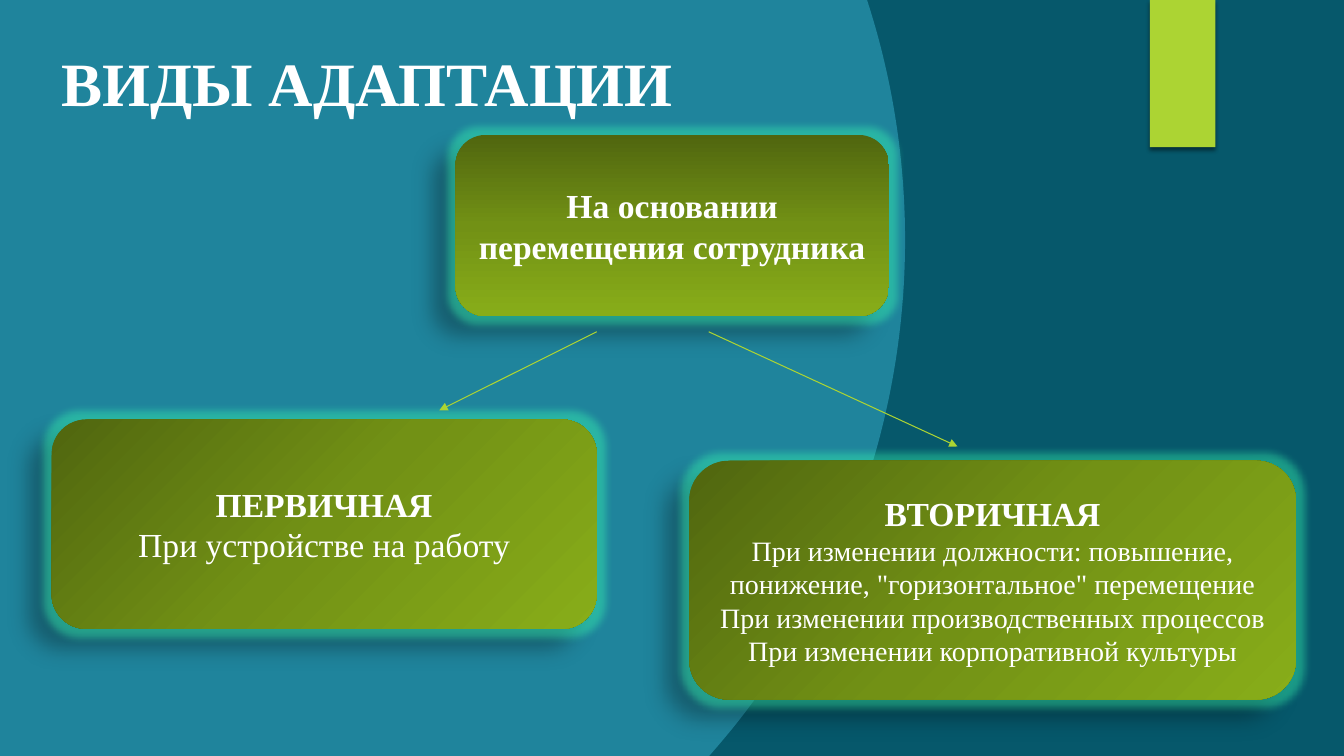
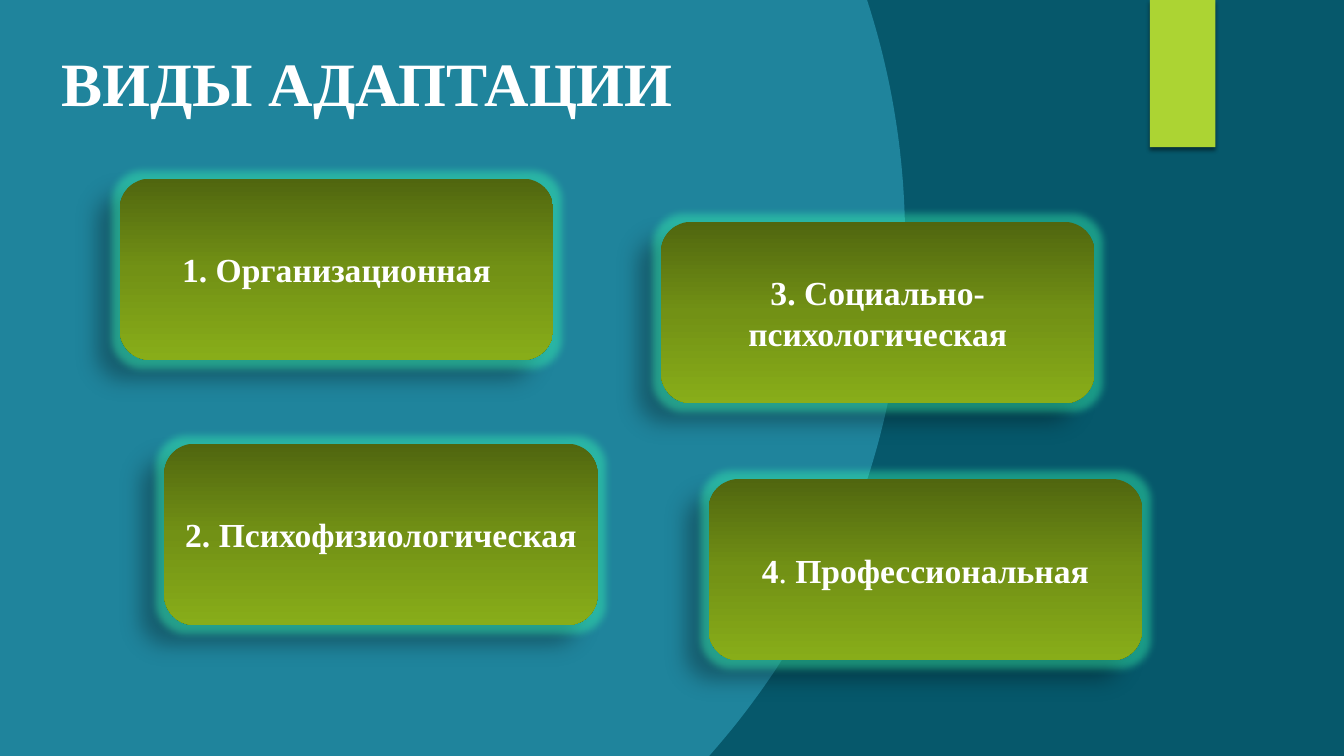
"""Build two slides on the kinds of staff adaptation."""
import copy
import math
from dataclasses import dataclass

from lxml import etree
from pptx import Presentation
from pptx import util as u
from pptx.dml.color import RGBColor
from pptx.enum import shapes, text
from pptx.oxml import ns

COLORS = {
    "backdrop": "06586B",
    "disc": "1F849C",
    "lime": "ACD433",
    "olive_dark": "50660F",
    "olive": "729115",
    "olive_light": "88AD19",
    "glow": "3AFFB2",
    "shadow": "000000",
    "text": "FFFFFF",
}
FONT = "Times New Roman"
TITLE = "ВИДЫ АДАПТАЦИИ"
WIDTH, HEIGHT = 33.87, 19.05
DISC_X, DISC_Y, DISC_RADIUS = 3.23, 6.05, 19.58
ARC_STEPS = 120
CARD_WIDTH, CARD_HEIGHT = 10.92, 4.57


@dataclass(frozen=True)
class Phrase:
    wording: str
    bold: bool = True


@dataclass(frozen=True)
class Line:
    phrases: tuple[Phrase, ...]
    size: int = 24


@dataclass(frozen=True)
class Card:
    left: float
    top: float
    lines: tuple[Line, ...]
    width: float = CARD_WIDTH
    height: float = CARD_HEIGHT
    angle: int = 90


@dataclass(frozen=True)
class Arrow:
    start: tuple[float, float]
    end: tuple[float, float]


@dataclass(frozen=True)
class Shadow:
    alpha: int
    blur: float
    distance: float
    direction: int


CARD_SHADOW = Shadow(28, 11.8, 19.7, 141)
BAND_SHADOW = Shadow(45, 3, 2, 90)


def heading(wording: str) -> Line:
    return Line((Phrase(wording),))


def detail(wording: str, size: int) -> Line:
    return Line((Phrase(wording, False),), size)


MOVEMENT_CARDS = (
    Card(11.48, 3.4, (heading("На основании перемещения сотрудника"),)),
    Card(17.37, 11.61, (
        heading("ВТОРИЧНАЯ"),
        detail("При изменении должности: повышение, понижение, \"горизонтальное\" перемещение", 20),
        detail("При изменении производственных процессов", 20),
        detail("При изменении корпоративной культуры", 20),
    ), 15.29, 6.02, 45),
    Card(1.3, 10.57, (
        heading("ПЕРВИЧНАЯ"),
        detail("При устройстве на работу", 24),
    ), 13.74, 5.28, 45),
)
MOVEMENT_ARROWS = (
    Arrow((15.04, 8.36), (11.07, 10.34)),
    Arrow((17.86, 8.36), (24.13, 11.25)),
)
KIND_CARDS = (
    Card(3.02, 4.5, (heading("1. Организационная"),)),
    Card(16.66, 5.59, (heading("3. Социально-психологическая"),)),
    Card(4.14, 11.18, (heading("2. Психофизиологическая"),)),
    Card(17.86, 12.07, (Line((Phrase("4"), Phrase(". ", False), Phrase("Профессиональная"))),)),
)


def rgb(name: str) -> RGBColor:
    return RGBColor.from_string(COLORS[name])


def add_effect(effects, tag: str, color: str, alpha: int, **attributes: int) -> None:
    effect = etree.SubElement(effects, ns.qn(tag), {k: str(v) for k, v in attributes.items()})
    tint = etree.SubElement(effect, ns.qn("a:srgbClr"), val=COLORS[color])
    etree.SubElement(tint, ns.qn("a:alpha"), val=str(alpha * 1000))


def add_effects(shape, shadow: Shadow, glow: bool = False) -> None:
    shape.shadow.inherit = False
    effects = shape.element.spPr.find(ns.qn("a:effectLst"))
    if glow:
        add_effect(effects, "a:glow", "glow", 40, rad=u.Pt(11))
    add_effect(effects, "a:outerShdw", "shadow", shadow.alpha,
               blurRad=u.Pt(shadow.blur), dist=u.Pt(shadow.distance),
               dir=shadow.direction * 60000, rotWithShape=0)


def fill_plain(shape, color: str) -> None:
    shape.fill.solid()
    shape.fill.fore_color.rgb = rgb(color)
    shape.line.fill.background()


def format_run(run, size: int, bold: bool) -> None:
    run.font.name = FONT
    run.font.size = u.Pt(size)
    run.font.bold = bold
    run.font.color.rgb = rgb("text")


def decorate_layout(layout, slide) -> None:
    layout.background.fill.solid()
    layout.background.fill.fore_color.rgb = rgb("backdrop")
    first = math.asin(-DISC_Y / DISC_RADIUS)
    last = math.asin((HEIGHT - DISC_Y) / DISC_RADIUS)
    angles = [first + (last - first) * step / ARC_STEPS for step in range(ARC_STEPS + 1)]
    arc = [(u.Cm(DISC_X + DISC_RADIUS * math.cos(a)), u.Cm(DISC_Y + DISC_RADIUS * math.sin(a)))
           for a in angles]
    outline = slide.shapes.build_freeform(0, 0)
    outline.add_line_segments(arc + [(0, u.Cm(HEIGHT))], close=True)
    disc = outline.convert_to_shape()
    fill_plain(disc, "disc")
    disc.shadow.inherit = False
    band = slide.shapes.add_shape(shapes.MSO_SHAPE.RECTANGLE,
                                  u.Cm(28.98), 0, u.Cm(1.65), u.Cm(3.71))
    fill_plain(band, "lime")
    add_effects(band, BAND_SHADOW)
    for number, decoration in enumerate((disc, band), start=101):
        decoration.element.find(".//" + ns.qn("p:cNvPr")).set("id", str(number))
        layout.shapes.element.append(decoration.element)
    for placeholder in layout.placeholders:
        if placeholder.placeholder_format.type == shapes.PP_PLACEHOLDER.TITLE:
            placeholder.left, placeholder.top = u.Cm(1.3), u.Cm(0.86)
            placeholder.width, placeholder.height = u.Cm(16.56), u.Cm(2.39)


def add_title(slide) -> None:
    frame = slide.shapes.title.text_frame
    frame.text = TITLE
    frame.auto_size = text.MSO_AUTO_SIZE.NONE
    frame.vertical_anchor = text.MSO_ANCHOR.MIDDLE
    frame.paragraphs[0].alignment = text.PP_ALIGN.LEFT
    format_run(frame.paragraphs[0].runs[0], 44, True)


def add_card(slide, card: Card) -> None:
    shape = slide.shapes.add_shape(
        shapes.MSO_SHAPE.FLOWCHART_ALTERNATE_PROCESS,
        u.Cm(card.left), u.Cm(card.top), u.Cm(card.width), u.Cm(card.height))
    shape.fill.gradient()
    shape.fill.gradient_angle = 360 - card.angle
    stops = shape.element.spPr.find(".//" + ns.qn("a:gsLst"))
    stops.append(copy.deepcopy(stops[0]))
    shades = ("olive_dark", "olive", "olive_light")
    for stop, shade, position in zip(shape.fill.gradient_stops, shades, (0, 0.5, 1)):
        stop.color.rgb = rgb(shade)
        stop.position = position
    shape.line.fill.background()
    add_effects(shape, CARD_SHADOW, glow=True)
    frame = shape.text_frame
    frame.word_wrap = True
    frame.vertical_anchor = text.MSO_ANCHOR.MIDDLE
    for index, line in enumerate(card.lines):
        paragraph = frame.add_paragraph() if index else frame.paragraphs[0]
        paragraph.alignment = text.PP_ALIGN.CENTER
        for phrase in line.phrases:
            run = paragraph.add_run()
            run.text = phrase.wording
            format_run(run, line.size, phrase.bold)


def add_arrow(slide, arrow: Arrow) -> None:
    ends = [u.Cm(value) for value in arrow.start + arrow.end]
    connector = slide.shapes.add_connector(shapes.MSO_CONNECTOR.STRAIGHT, *ends)
    connector.line.color.rgb = rgb("lime")
    connector.line.width = u.Pt(0.75)
    properties = connector.element.spPr
    etree.SubElement(properties.find(ns.qn("a:ln")), ns.qn("a:tailEnd"), type="triangle")
    etree.SubElement(properties, ns.qn("a:effectLst"))


def main() -> None:
    deck = Presentation()
    deck.slide_width, deck.slide_height = u.Cm(WIDTH), u.Cm(HEIGHT)
    layout = deck.slide_layouts.get_by_name("Title Only")
    movement, kinds = (deck.slides.add_slide(layout) for _ in range(2))
    decorate_layout(layout, movement)
    for slide, cards, arrows in ((movement, MOVEMENT_CARDS, MOVEMENT_ARROWS),
                                 (kinds, KIND_CARDS, ())):
        add_title(slide)
        for card in cards:
            add_card(slide, card)
        for arrow in arrows:
            add_arrow(slide, arrow)
    deck.save("out.pptx")


if __name__ == "__main__":
    main()
